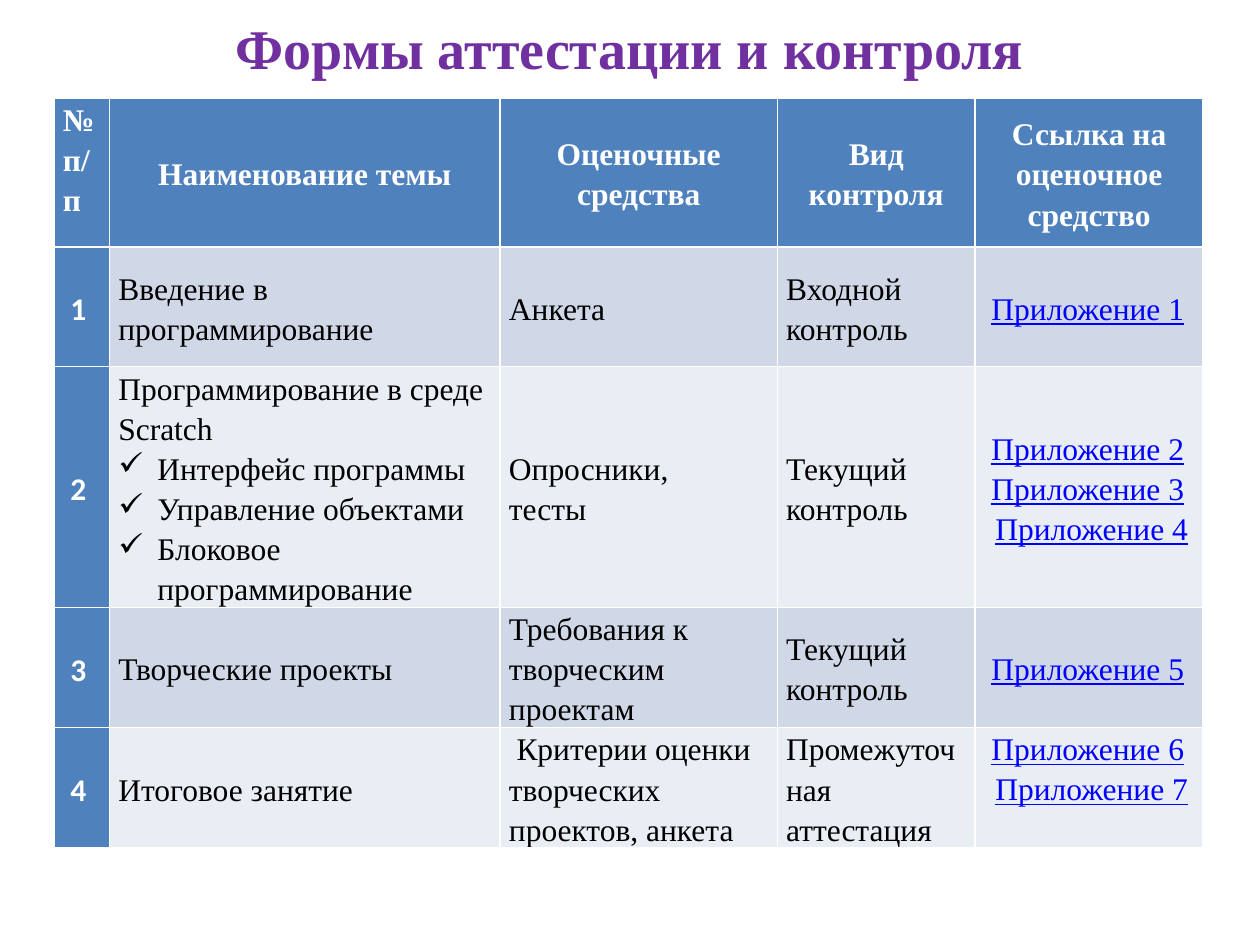
from lxml import etree
from pptx import Presentation
from pptx.dml.color import RGBColor
from pptx.enum.text import MSO_ANCHOR, PP_ALIGN
from pptx.oxml.ns import qn
from pptx.util import Inches, Pt

LEFT, CENTER = PP_ALIGN.LEFT, PP_ALIGN.CENTER
TOP, MIDDLE = MSO_ANCHOR.TOP, MSO_ANCHOR.MIDDLE

WHITE = RGBColor(0xFF, 0xFF, 0xFF)
BLACK = RGBColor(0x00, 0x00, 0x00)
PURPLE = RGBColor(0x70, 0x30, 0xA0)
LINK_BLUE = RGBColor(0x00, 0x00, 0xFF)
HEADER_BLUE = RGBColor(0x4F, 0x81, 0xBD)
BANDS = (RGBColor(0xD0, 0xD8, 0xE8), RGBColor(0xE9, 0xED, 0xF4))

CHECK = "✓"
CHECK_INDENT = 0.31
SPACE_INDENT = 0.06
LAST_LINK_INDENT = 0.09

COLUMN_WIDTHS = (0.44, 3.1, 2.2, 1.57, 1.81)
ROW_HEIGHTS = (1.18, 0.95, 1.91, 0.95, 0.95)

HEADINGS = ("№ п/п", "Наименование темы", "Оценочные средства",
            "Вид контроля", "Ссылка на оценочное средство")

# Topic lines, assessment lines, kind of control, appendix numbers
TOPICS = (
    (["Введение в программирование"], ["Анкета"], "Входной контроль", [1]),
    (["Программирование в среде Scratch", "✓Интерфейс программы",
      "✓Управление объектами", "✓Блоковое программирование"],
     ["Опросники,", "тесты"], "Текущий контроль", [2, 3, 4]),
    (["Творческие проекты"], ["Требования к творческим проектам"],
     "Текущий контроль", [5]),
    (["Итоговое занятие"], ["Критерии оценки творческих проектов, анкета"],
     "Промежуточная аттестация", [6, 7]),
)


class SlideBuilder:
    font_name = "Times New Roman"
    number_font = "Calibri"
    text_size = 18
    title_size = 32
    line_spacing = 1.15

    def __init__(self, slide):
        self.slide = slide

    def format_runs(self, paragraph, color, size=text_size, name=font_name,
                    bold=False, underline=False):
        for run in paragraph.runs:
            font = run.font
            font.name, font.size, font.bold = name, Pt(size), bold
            font.color.rgb = color
            font.underline = underline

    def title(self, text, left, top, width, height):
        title = self.slide.shapes.title
        title.left, title.top = Inches(left), Inches(top)
        title.width, title.height = Inches(width), Inches(height)
        title.text_frame.text = text
        heading = title.text_frame.paragraphs[0]
        heading.alignment = CENTER
        self.format_runs(heading, PURPLE, self.title_size, bold=True)

    def table(self, left, top, widths, heights):
        table = self.slide.shapes.add_table(
            len(heights), len(widths), Inches(left), Inches(top),
            Inches(sum(widths)), Inches(sum(heights))).table
        table.first_col = True
        for column, width in zip(table.columns, widths):
            column.width = Inches(width)
        for row, height in zip(table.rows, heights):
            row.height = Inches(height)
        return table

    def indent(self, paragraph, margin, first_line=0):
        properties = paragraph._p.get_or_add_pPr()
        properties.set("marL", str(Inches(margin)))
        properties.set("indent", str(Inches(first_line)))
        return properties

    def cell(self, cell, lines, fill, color=BLACK, align=LEFT, anchor=MIDDLE,
             **font):
        cell.fill.solid()
        cell.fill.fore_color.rgb = fill
        cell.vertical_anchor = anchor
        cell.margin_left = cell.margin_right = Inches(0.07)
        cell.margin_top = cell.margin_bottom = 0
        cell.text_frame.text = "\n".join(line.lstrip(CHECK) for line in lines)
        for paragraph, line in zip(cell.text_frame.paragraphs, lines):
            paragraph.alignment = align
            paragraph.line_spacing = self.line_spacing
            if line.startswith(CHECK):
                properties = self.indent(paragraph, CHECK_INDENT, -CHECK_INDENT)
                etree.SubElement(properties, qn("a:buChar"), char=CHECK)
            self.format_runs(paragraph, color, **font)
        return cell.text_frame.paragraphs


def main():
    prs = Presentation()
    prs.slide_width, prs.slide_height = Inches(10), Inches(7.5)
    builder = SlideBuilder(prs.slides.add_slide(prs.slide_layouts[5]))
    builder.title("Формы аттестации и контроля", 0.59, 0.05, 8.82, 0.64)
    table = builder.table(0.43, 0.78, COLUMN_WIDTHS, ROW_HEIGHTS)

    # Header row
    for column, heading in enumerate(HEADINGS):
        is_number = column == 0
        builder.cell(table.cell(0, column), [heading], HEADER_BLUE, WHITE,
                     LEFT if is_number else CENTER,
                     TOP if is_number else MIDDLE, bold=True)

    # Topic rows
    for row, (topic, assessment, control, appendices) in enumerate(TOPICS, 1):
        band = BANDS[(row - 1) % 2]
        is_last = row == len(TOPICS)

        number = builder.cell(table.cell(row, 0), [str(row)], HEADER_BLUE,
                              WHITE, name=builder.number_font, bold=True)
        builder.indent(number[0], SPACE_INDENT)
        builder.cell(table.cell(row, 1), topic, band)
        criteria = builder.cell(table.cell(row, 2), assessment, band)
        if is_last:
            builder.indent(criteria[0], 0, SPACE_INDENT)
        builder.cell(table.cell(row, 3), [control], band)

        links = builder.cell(table.cell(row, 4),
                             [f"Приложение {n}" for n in appendices], band,
                             LINK_BLUE, anchor=TOP if is_last else MIDDLE,
                             underline=True)
        for link in links:
            builder.indent(link, SPACE_INDENT)
        if len(links) > 1:
            builder.indent(links[-1], LAST_LINK_INDENT)

    prs.save("out.pptx")


if __name__ == "__main__":
    main()
